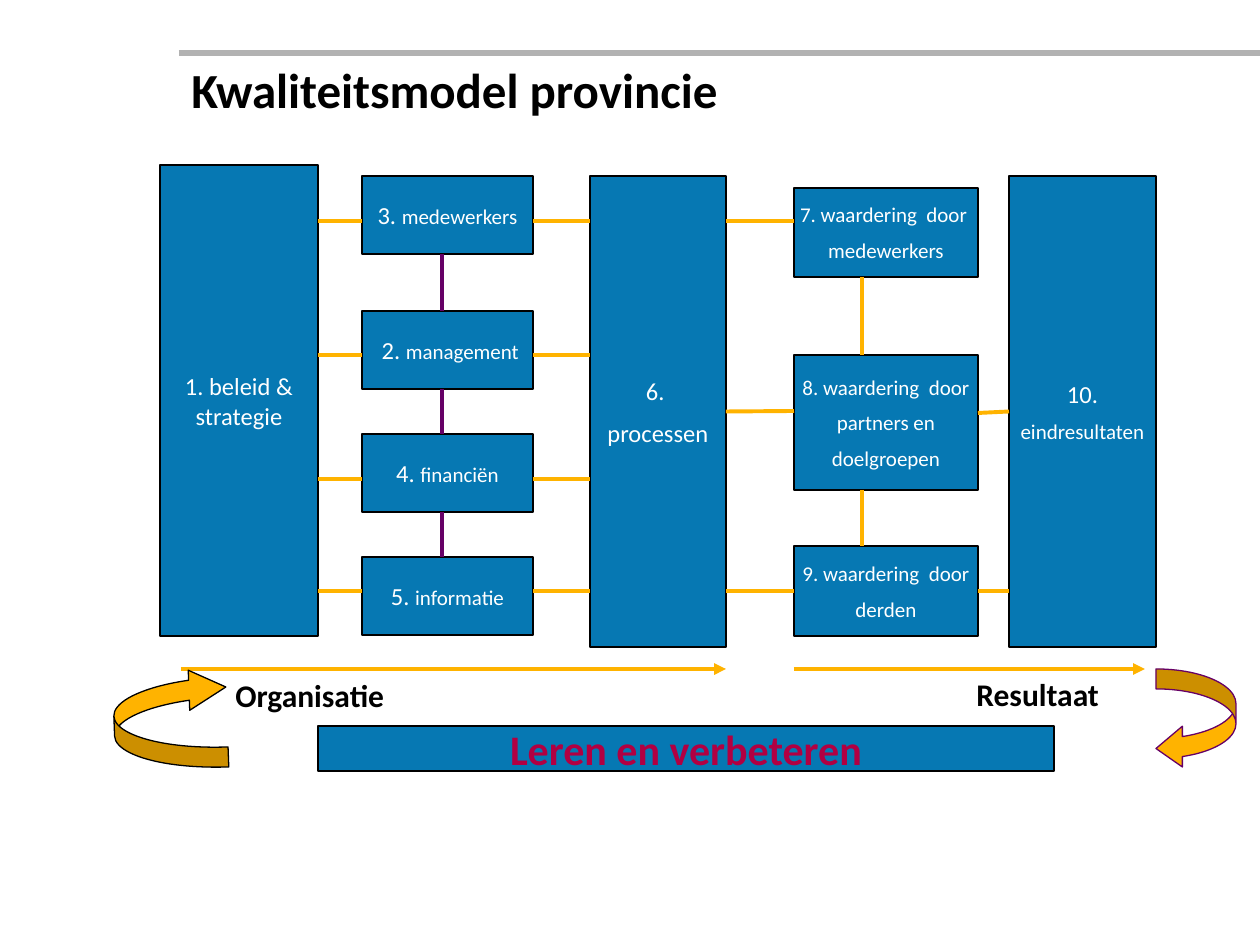
from lxml.etree import SubElement
from pptx import Presentation
from pptx.dml.color import RGBColor
from pptx.enum.shapes import MSO_CONNECTOR as Link, MSO_SHAPE as Kind
from pptx.enum.text import MSO_ANCHOR as Anchor, PP_ALIGN as Align
from pptx.oxml.ns import qn
from pptx.util import Emu, Pt

SCALE = 914400 / 126
BLUE = RGBColor(0x06, 0x78, 0xB3)
GOLD = RGBColor(0xFF, 0xB3, 0x00)
PLUM = RGBColor(0x66, 0x00, 0x66)
RED = RGBColor(0xB1, 0x00, 0x42)
GREY = RGBColor(0xB2, 0xB2, 0xB2)
BLACK = RGBColor(0, 0, 0)
WHITE = RGBColor(0xFF, 0xFF, 0xFF)


def px(*sizes):
    return [Emu(round(size * SCALE)) for size in sizes]


class Board:
    font = "Calibri"

    def __init__(self, slide):
        self.shapes = slide.shapes

    def style(self, font, size, color, bold):
        font.name, font.size, font.bold = self.font, Pt(size), bold
        font.color.rgb = color

    def letter(self, frame, lines, color, bold=False, align=Align.LEFT):
        """Put text in a frame; each line is a list of (text, size) runs."""
        for i, line in enumerate(lines):
            para = frame.add_paragraph() if i else frame.paragraphs[0]
            para.alignment = align
            size = line[0][1]
            para.space_before = Pt(size / 2 if i else 0)
            self.style(para.font, size, color, bold)
            for text, part in line:
                run = para.add_run()
                run.text = text
                if part != size:
                    run.font.size = Pt(part)

    def label(self, area, text, size):
        box = self.shapes.add_textbox(*px(*area))
        box.text_frame.word_wrap = True
        self.letter(box.text_frame, [[(text, size)]], BLACK, True)

    def shape(self, kind, area, fill, edge):
        shape = self.shapes.add_shape(kind, *px(*area))
        shape.shadow.inherit = False
        shape.fill.solid()
        shape.fill.fore_color.rgb = fill
        shape.line.color.rgb = edge
        shape.line.width = Pt(0.75)
        return shape

    def box(self, area, *lines, color=WHITE, bold=False, wrap=False):
        box = self.shape(Kind.RECTANGLE, area, BLUE, BLACK)
        frame = box.text_frame
        frame.word_wrap = wrap
        frame.vertical_anchor = Anchor.MIDDLE
        self.letter(frame, lines, color, bold, Align.CENTER)
        return box

    def curl(self, area, edge, adjust, turn=0):
        curl = self.shape(Kind.CURVED_LEFT_ARROW, area, GOLD, edge)
        for i, value in enumerate(adjust):
            curl.adjustments[i] = value
        curl.rotation = turn

    def line(self, x1, y1, x2, y2, color=GOLD, width=2.25, head=False,
             start=None, end=None):
        """Draw a line; start joins a right side, end joins a left side."""
        line = self.shapes.add_connector(Link.STRAIGHT, *px(x1, y1, x2, y2))
        line.line.color.rgb = color
        line.line.width = Pt(width)
        props = line._element.spPr
        if head:
            SubElement(props.find(qn("a:ln")), qn("a:tailEnd"), type="triangle")
        SubElement(props, qn("a:effectLst"))
        if start:
            line.begin_connect(start, 3)
        if end:
            line.end_connect(end, 1)


def main():
    deck = Presentation()
    deck.slide_width, deck.slide_height = px(1260, 945)
    board = Board(deck.slides.add_slide(deck.slide_layouts[6]))

    board.line(179, 53, 1260, 53, GREY, 3)
    board.label((179, 53, 1029, 105), "Kwaliteitsmodel provincie", 28)

    # Organisation columns
    board.box((160, 165, 158, 471), [("1. beleid & strategie", 14)], wrap=True)
    means = [(176, "3. ", "medewerkers"), (311, " 2. ", "management"),
             (434, "4. ", "financiën"), (557, "5. ", "informatie")]
    for top, number, name in means:
        board.box((362, top, 171, 78), [(number, 14), (name, 12)])
    process = board.box((590, 176, 136, 471), [("6. ", 14)], [("processen", 14)])

    # Result columns
    ratings = [(188, 89, ["7. waardering  door ", "medewerkers"]),
               (355, 135, ["8. waardering  door", "partners en", "doelgroepen"]),
               (546, 90, ["9. waardering  door", "derden"])]
    rated = [board.box((794, top, 184, height), *[[(text, 12)] for text in texts])
             for top, height, texts in ratings]
    result = board.box((1009, 176, 147, 471), [("10.", 14)], [("eindresultaten", 12)])

    # Links across
    for y in (221, 355, 479, 591):
        for left, right in ((318, 362), (533, 590)):
            board.line(left, y, right, y)
    board.line(726, 221, 794, 221)
    board.line(726, 411, 794, 411, start=process)
    board.line(726, 591, 794, 591, end=rated[2])
    board.line(978, 413, 1009, 411, end=result)
    board.line(978, 591, 1009, 591, start=rated[2])

    # Links down
    for upper, lower in zip(means, means[1:]):
        board.line(442, upper[0] + 78, 442, lower[0], PLUM)
    for upper, lower in zip(ratings, ratings[1:]):
        board.line(862, upper[0] + upper[1], 862, lower[0])

    # Learning cycle
    board.line(181, 669, 726, 669, head=True)
    board.line(794, 669, 1145, 669, head=True)
    board.label((223, 670, 238, 50), "Organisatie", 18)
    board.label((964, 669, 218, 50), "Resultaat", 18)
    board.curl((1156, 669, 80, 100), PLUM, (0.25, 0.51, 0.33))
    board.curl((114, 669, 113, 100), BLACK, (0.2, 0.4, 0.37), 177.9)
    board.box((318, 726, 736, 45), [("Leren en verbeteren", 24)], color=RED, bold=True)

    deck.save("out.pptx")


if __name__ == "__main__":
    main()
